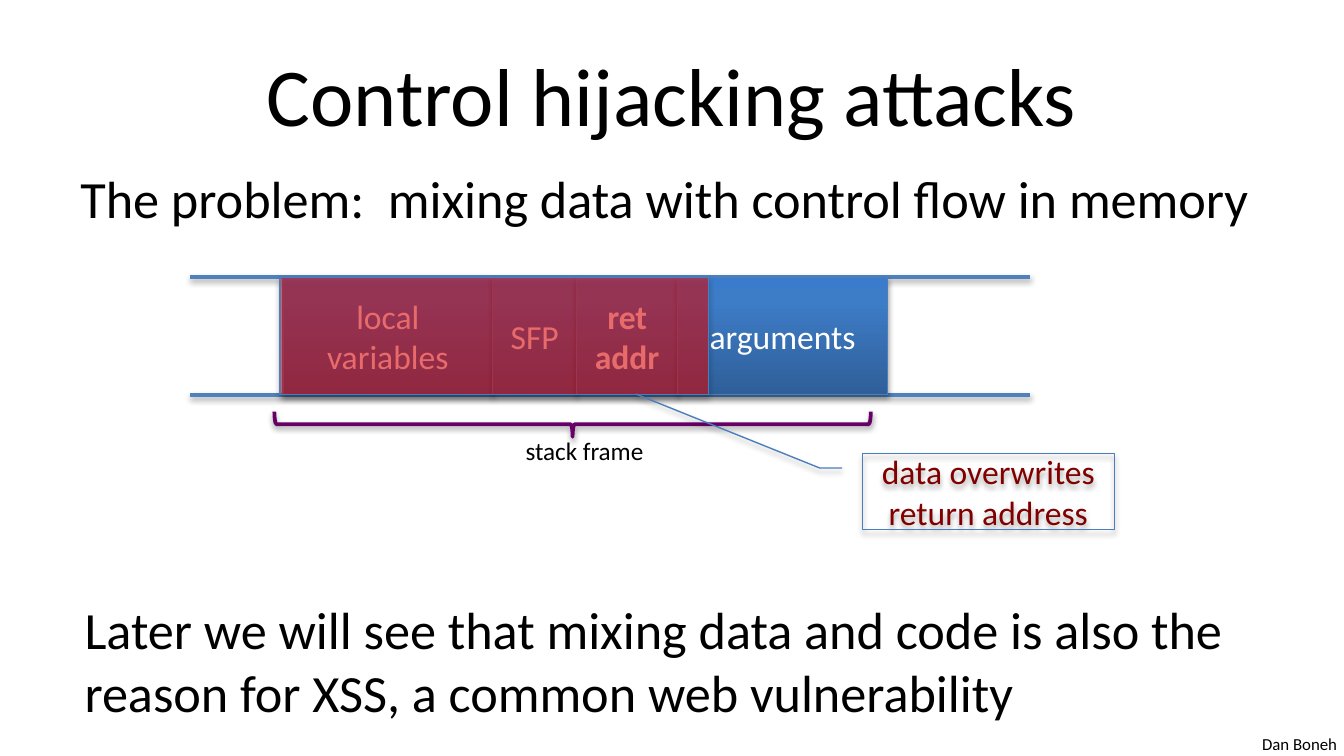
from copy import deepcopy
from dataclasses import dataclass

from lxml import etree
from pptx import Presentation
from pptx import util as u
from pptx.dml.color import RGBColor
from pptx.enum import shapes, text
from pptx.oxml.ns import qn

PX = 9525  # EMU in one px, 96 px to the inch


@dataclass(frozen=True)
class Theme:
    font: str = "Calibri"
    ink: str = "000000"
    white: str = "FFFFFF"
    rail: str = "4F81BD"
    edge: str = "4B7EBC"
    brace: str = "660066"
    overflow: str = "FF0000"
    warning: str = "800000"
    cell: tuple = ((0, "2F5F99"), (0.8, "3D7CC7"), (1, "3A7CCB"))
    title: float = 44
    body: float = 28
    label: float = 18
    caption: float = 13.5
    footer: float = 9
    thick: float = 2
    thin: float = 0.75


T = Theme()
SHAPE = shapes.MSO_SHAPE
CENTER = text.PP_ALIGN.CENTER
MIDDLE = text.MSO_ANCHOR.MIDDLE


def px(*lengths):
    return [u.Emu(n * PX) for n in lengths]


def rgb(color):
    return RGBColor.from_string(color)


def write(s, words, size, color, align=None, bold=False, before=0):
    tf = s.text_frame
    tf.text = words
    for p in tf.paragraphs:
        p.alignment = align
        p.space_before = u.Pt(before)
        p.font.name, p.font.size, p.font.bold = T.font, u.Pt(size), bold
        p.font.color.rgb = rgb(color)


def add_text(slide, box, words, size, wrap=True, anchor=text.MSO_ANCHOR.TOP, **style):
    s = slide.shapes.add_textbox(*px(*box))
    s.text_frame.word_wrap = wrap
    s.text_frame.vertical_anchor = anchor
    write(s, words, size, T.ink, **style)


def outline(s, color, width, alpha, dist):
    """Set the line, then the soft shadow that follows it in spPr."""
    s.line.color.rgb = rgb(color)
    s.line.width = u.Pt(width)
    effects = etree.SubElement(s._element.spPr, qn("a:effectLst"))
    shadow = etree.SubElement(effects, qn("a:outerShdw"), blurRad=str(u.Pt(3.1)),
                              dist=str(u.Pt(dist)), dir="5400000", rotWithShape="0")
    black = etree.SubElement(shadow, qn("a:srgbClr"), val="000000")
    etree.SubElement(black, qn("a:alpha"), val=str(alpha * 1000))


def add_shape(slide, kind, box, color=T.edge, width=T.thin, alpha=35, dist=1.8):
    s = slide.shapes.add_shape(kind, *px(*box))
    s.fill.background()
    outline(s, color, width, alpha, dist)
    return s


def fill_cell(s):
    s.fill.gradient()
    s.fill.gradient_angle = 90
    stops = s._element.spPr.find(".//" + qn("a:gsLst"))
    stops.insert(1, deepcopy(stops[0]))
    for stop, (position, color) in zip(s.fill.gradient_stops, T.cell):
        stop.position = position
        stop.color.rgb = rgb(color)


def add_memory(slide, x, y, w, h):
    # Rails above and below the stack
    for rail_y in (y, y + h):
        rail = slide.shapes.add_connector(shapes.MSO_CONNECTOR.STRAIGHT,
                                          *px(x, rail_y, x + w, rail_y))
        outline(rail, T.rail, T.thick, 38, 1.6)

    # Cells of the frame, side by side
    left = x + 66
    for words, width, bold in (("local variables", 150, False), ("SFP", 60, False),
                               ("ret\naddr", 72, True), ("arguments", 150, False)):
        cell = add_shape(slide, SHAPE.RECTANGLE, (left, y, width, h))
        fill_cell(cell)
        write(cell, words, T.label, T.white, CENTER, bold)
        left += width

    # Brace, turned to open upwards, and its caption
    brace = add_shape(slide, SHAPE.LEFT_BRACE, (x + 264, y - 108, 18, 426),
                      T.brace, T.thick, 38, 1.6)
    brace.rotation = 270
    add_text(slide, (x + 230, y + 108, 105, 32), "stack frame", T.caption, wrap=False)

    # Overflowing data
    overflow = add_shape(slide, SHAPE.RECTANGLE, (x + 64, y, 306, h))
    overflow.fill.solid()
    overflow.fill.fore_color.rgb = rgb(T.overflow)
    tint = overflow._element.spPr.find(qn("a:solidFill"))[0]
    etree.SubElement(tint, qn("a:alpha"), val="49000")

    # Callout pointing at the return address
    callout = add_shape(slide, SHAPE.LINE_CALLOUT_2, (x + 480, y + 126, 180, 54))
    for i, value in enumerate((0.19, -0.08, 0.19, -0.17, -0.79, -0.9)):
        callout.adjustments[i] = value
    write(callout, "data overwrites\nreturn address", T.label, T.warning, CENTER)


def add_slide(prs):
    slide = prs.slides.add_slide(prs.slide_layouts[6])
    add_text(slide, (892, 519, 73, 24), "Dan Boneh", T.footer, wrap=False)
    add_text(slide, (48, 22, 864, 90), "Control hijacking attacks", T.title,
             anchor=MIDDLE, align=CENTER)
    add_text(slide, (48, 114, 864, 102),
             "The problem:  mixing data with control flow in memory", T.body, before=5.6)
    add_memory(slide, 136, 198, 600, 84)
    add_text(slide, (51, 422, 864, 102),
             "Later we will see that mixing data and code is also the reason for XSS, "
             "a common web vulnerability", T.body, before=5.6)


def main():
    prs = Presentation()
    prs.slide_width, prs.slide_height = px(960, 540)
    add_slide(prs)
    prs.save("out.pptx")


if __name__ == "__main__":
    main()
